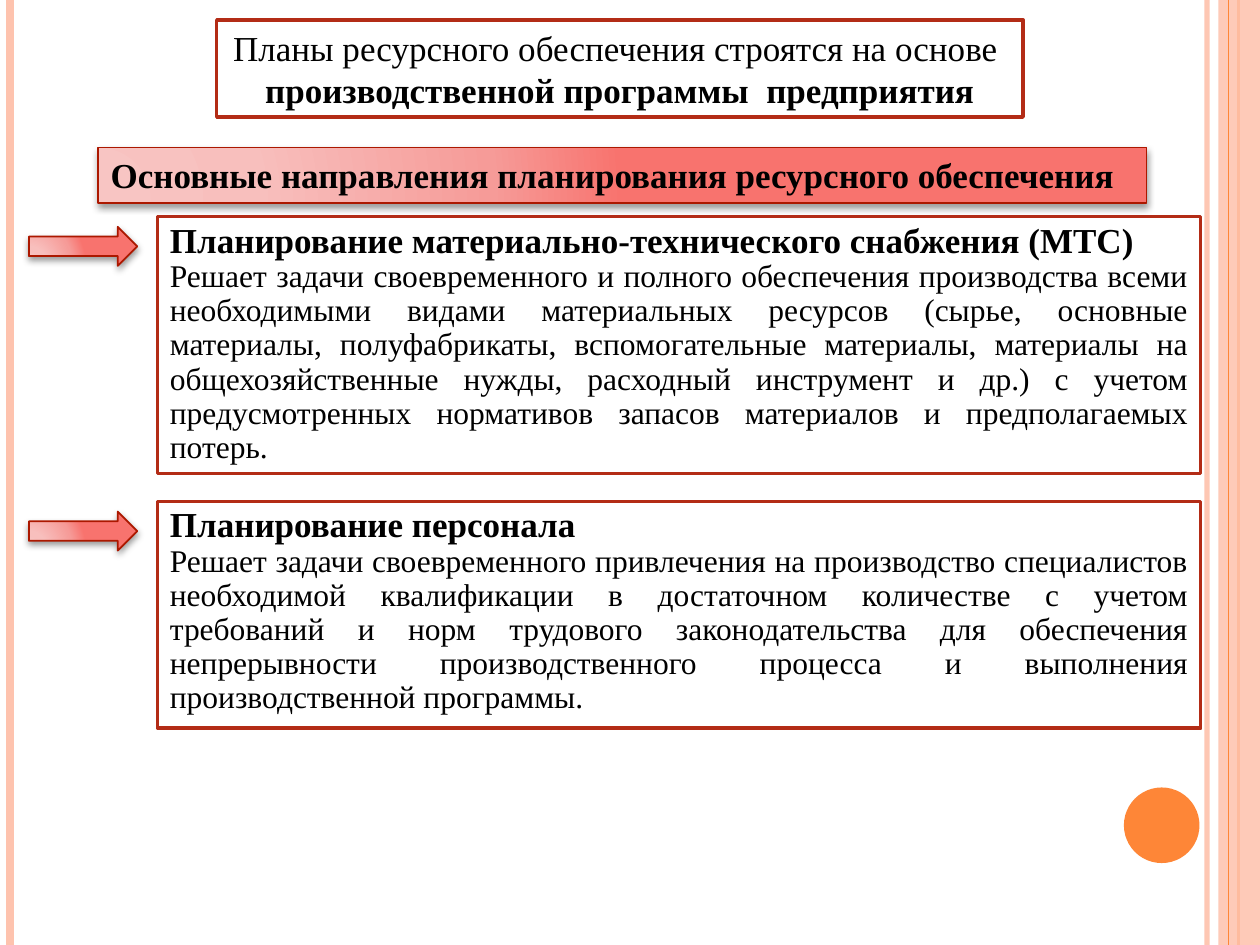
from lxml import etree
from pptx import Presentation
from pptx.dml.color import RGBColor
from pptx.enum.shapes import MSO_CONNECTOR as Connector, MSO_SHAPE as Shape
from pptx.enum.text import MSO_ANCHOR as Anchor, PP_ALIGN as Align
from pptx.oxml import parse_xml
from pptx.oxml.ns import nsdecls, qn
from pptx.util import Inches, Pt

PEACH, ORANGE, WHITE, BLACK = "FEC3AE", "FE8637", "FFFFFF", "000000"
FRAME, EDGE = "B32C16", "AC1800"
GLOW_STOPS = [(0, "F8C5C3"), (30, "F8BFBD"), (75, "F69B98"), (100, "F8736E")]


def color(value):
    return RGBColor.from_string(value)


def set_alpha(element, percent):
    for tone in element.iter(qn("a:srgbClr")):
        etree.SubElement(tone, qn("a:alpha"), val=str(percent * 1000))


def add_shape(page, kind, box, fill=None, line=None, width=1):
    shape = page.shapes.add_shape(kind, *map(Inches, box))
    shape.shadow.inherit = False
    if fill:
        shape.fill.solid()
        shape.fill.fore_color.rgb = color(fill)
    if line:
        shape.line.color.rgb = color(line)
        shape.line.width = Pt(width)
    else:
        shape.line.fill.background()
    return shape


def add_glow_shape(page, kind, box):
    """Shape with a radial red gradient and a soft shadow below."""
    shape = add_shape(page, kind, box, line=EDGE)
    stops = "".join(
        f'<a:gs pos="{pos * 1000}"><a:srgbClr val="{tone}"/></a:gs>'
        for pos, tone in GLOW_STOPS)
    properties = shape._element.spPr
    properties.find(qn("a:prstGeom")).addnext(parse_xml(
        f'<a:gradFill {nsdecls("a")} rotWithShape="1"><a:gsLst>{stops}</a:gsLst>'
        '<a:path path="circle"><a:fillToRect l="5000" t="100000" r="120000" '
        'b="10000"/></a:path></a:gradFill>'))
    properties.find(qn("a:effectLst")).append(parse_xml(
        f'<a:outerShdw {nsdecls("a")} blurRad="{Pt(4)}" dist="{Pt(2)}" '
        'dir="5400000" rotWithShape="0"><a:srgbClr val="000000">'
        '<a:alpha val="40000"/></a:srgbClr></a:outerShdw>'))
    return shape


def add_text(shape, text, size=20, bold=False, align=Align.LEFT, spacing=None):
    """Write the first paragraph, or append one after existing text."""
    frame = shape.text_frame
    frame.word_wrap = True
    frame.vertical_anchor = Anchor.TOP
    para = frame.add_paragraph() if frame.text else frame.paragraphs[0]
    para.alignment = align
    if spacing:
        para.line_spacing = spacing
    span = para.add_run()
    span.text = text
    span.font.name = "Times New Roman"
    span.font.size = Pt(size)
    span.font.bold = bold
    span.font.color.rgb = color(BLACK)


def add_stripe(page, x, height, tone, width, alpha=None):
    stripe = page.shapes.add_connector(
        Connector.STRAIGHT, Inches(x), 0, Inches(x), Inches(height))
    stripe.line.color.rgb = color(tone)
    stripe.line.width = Pt(width)
    properties = stripe._element.spPr
    if alpha:
        set_alpha(properties, alpha)
    etree.SubElement(properties, qn("a:effectLst"))


def add_decoration(page, width, height):
    add_stripe(page, width - 0.42, height, PEACH, 3, alpha=93)
    add_stripe(page, 0.08, height, PEACH, 4.5)
    add_stripe(page, width - 0.17, height, ORANGE, 1.5)
    band = add_shape(page, Shape.RECTANGLE, (width - 0.33, 0, 0.33, height), PEACH)
    set_alpha(band._element.spPr, 87)
    add_stripe(page, width - 0.25, height, ORANGE, 0.75)
    add_shape(page, Shape.OVAL, (width - 1.08, height - 1.25, 0.6, 0.6), ORANGE)


def add_heading(page, box):
    heading = add_shape(page, Shape.RECTANGLE, box, WHITE, FRAME, 2)
    add_text(heading, "Планы ресурсного обеспечения строятся на основе ",
             align=Align.CENTER)
    add_text(heading, "производственной программы  предприятия",
             bold=True, align=Align.CENTER)


def add_banner(page, box):
    banner = add_glow_shape(page, Shape.RECTANGLE, box)
    add_text(banner, "Основные направления планирования ресурсного обеспечения",
             bold=True)


def add_direction(page, box, title, body):
    """Framed description with an arrow pointing at its title."""
    left, top = box[:2]
    frame = add_shape(page, Shape.RECTANGLE, box, WHITE, FRAME, 2)
    add_text(frame, title, bold=True, spacing=0.9)
    add_text(frame, body, size=18, align=Align.JUSTIFY, spacing=0.9)
    add_glow_shape(page, Shape.RIGHT_ARROW, (left - 1.02, top + 0.08, 0.86, 0.31))


DIRECTIONS = [
    ((1.25, 1.72, 8.28, 2.04),
     "Планирование материально-технического снабжения (МТС)",
     "Решает задачи своевременного и полного обеспечения производства всеми "
     "необходимыми видами материальных ресурсов (сырье, основные материалы, "
     "полуфабрикаты, вспомогательные материалы, материалы на общехозяйственные "
     "нужды, расходный инструмент и др.) с учетом предусмотренных нормативов "
     "запасов материалов и предполагаемых потерь."),
    ((1.25, 3.98, 8.28, 1.8),
     "Планирование персонала",
     "Решает задачи своевременного привлечения на производство специалистов "
     "необходимой квалификации в достаточном количестве с учетом требований и "
     "норм трудового законодательства для обеспечения непрерывности "
     "производственного процесса и выполнения производственной программы."),
]


def main():
    deck = Presentation()
    width, height = 10, 7.5
    deck.slide_width, deck.slide_height = Inches(width), Inches(height)
    page = deck.slides.add_slide(deck.slide_layouts[6])
    add_decoration(page, width, height)
    add_heading(page, (1.72, 0.16, 6.4, 0.77))
    add_banner(page, (0.78, 1.17, 8.32, 0.44))
    for box, title, body in DIRECTIONS:
        add_direction(page, box, title, body)
    deck.save("out.pptx")


if __name__ == "__main__":
    main()
